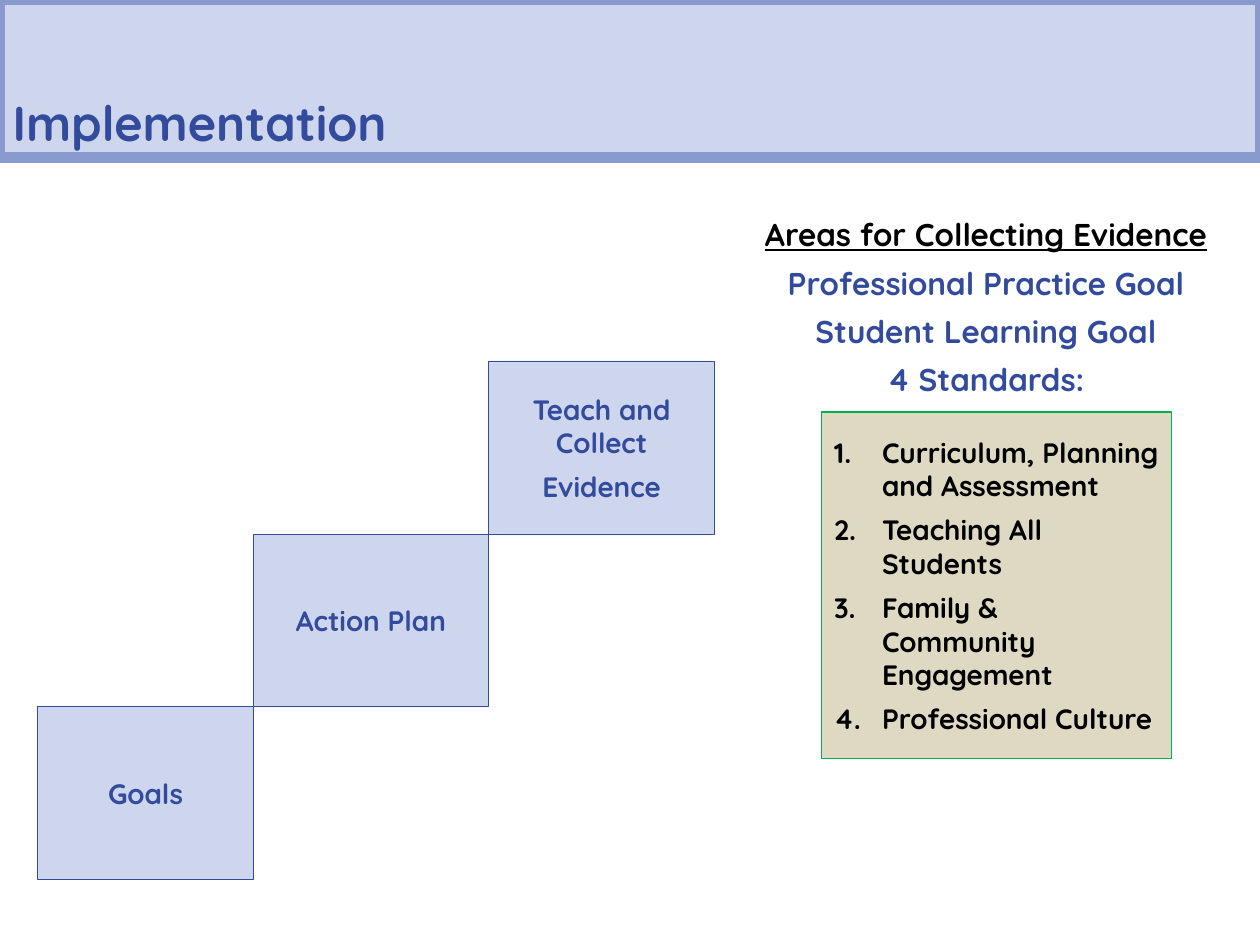
from dataclasses import dataclass

import pptx
import pptx.dml.color
import pptx.enum.shapes
import pptx.enum.text
import pptx.oxml
import pptx.oxml.ns
import pptx.util

Inches = pptx.util.Inches
Pt = pptx.util.Pt
RGBColor = pptx.dml.color.RGBColor
Align = pptx.enum.text.PP_ALIGN
Anchor = pptx.enum.text.MSO_ANCHOR

FONT = "Quicksand"
NAVY = RGBColor(0x33, 0x4B, 0x9C)
PALE_BLUE = RGBColor(0xCE, 0xD6, 0xED)
FRAME_BLUE = RGBColor(0x89, 0x9A, 0xCE)
TAN = RGBColor(0xDD, 0xD9, 0xC3)
GREEN = RGBColor(0x00, 0xB0, 0x50)
BLACK = RGBColor(0, 0, 0)

STEP_LEFT, STEP_HEIGHT, STAIRS_BOTTOM = 0.3, 1.37, 6.98


@dataclass
class Step:
    lines: list[str]
    width: float


STEPS = [
    Step(["Goals"], 1.71),
    Step(["Action Plan"], 1.87),
    Step(["Teach and Collect", "Evidence"], 1.79),
]
EVIDENCE_AREAS = [
    "Areas for Collecting Evidence",
    "Professional Practice Goal",
    "Student Learning Goal",
    "4 Standards:",
]
STANDARDS = [
    "Curriculum, Planning and Assessment",
    "Teaching All Students",
    "Family & Community Engagement",
    "Professional Culture",
]


def apply(target, formats: dict) -> None:
    for name, value in formats.items():
        setattr(target, name, value)


def place(shape, left: float, top: float, width: float, height: float) -> None:
    apply(shape, {"left": Inches(left), "top": Inches(top),
                  "width": Inches(width), "height": Inches(height)})


def paint(shape, fill: RGBColor, line: RGBColor, weight: float) -> None:
    shape.fill.solid()
    shape.fill.fore_color.rgb = fill
    shape.line.color.rgb = line
    shape.line.width = Pt(weight)


def write(shape, lines: list[str], size: int, color: RGBColor, align: Align,
          anchor: Anchor = Anchor.MIDDLE, after: int = 6, wrap: bool = True) -> list:
    frame = shape.text_frame
    frame.text = "\n".join(lines)
    apply(frame, {"word_wrap": wrap, "vertical_anchor": anchor,
                  "auto_size": pptx.enum.text.MSO_AUTO_SIZE.NONE})
    for paragraph in frame.paragraphs:
        apply(paragraph, {"alignment": align, "space_before": Pt(0), "space_after": Pt(after)})
        font = paragraph.runs[0].font
        apply(font, {"name": FONT, "size": Pt(size), "bold": True})
        font.color.rgb = color
    return list(frame.paragraphs)


def number(paragraph, indent: float) -> None:
    properties = paragraph._p.get_or_add_pPr()
    properties.set("marL", str(Inches(indent)))
    properties.set("indent", str(Inches(-indent)))
    for tag, attribute, value in (("a:buFont", "typeface", "+mj-lt"),
                                  ("a:buAutoNum", "type", "arabicPeriod")):
        bullet = pptx.oxml.parse_xml(f"<{tag} {pptx.oxml.ns.nsdecls('a')}/>")
        bullet.set(attribute, value)
        properties.append(bullet)


def draw_stairs(slide, steps: list[Step]) -> None:
    left, top = STEP_LEFT, STAIRS_BOTTOM
    for step in steps:
        top -= STEP_HEIGHT
        box = slide.shapes.add_shape(pptx.enum.shapes.MSO_SHAPE.RECTANGLE, 0, 0, 0, 0)
        place(box, left, top, step.width, STEP_HEIGHT)
        box.shadow.inherit = False
        paint(box, PALE_BLUE, NAVY, 0.5)
        write(box, step.lines, 16, NAVY, Align.CENTER)
        left += step.width


def main() -> None:
    presentation = pptx.Presentation()
    apply(presentation, {"slide_width": Inches(10), "slide_height": Inches(7.5)})
    slide = presentation.slides.add_slide(presentation.slide_layouts[1])

    # Title band
    title = slide.shapes.title
    place(title, 0, 0, 10, 1.25)
    paint(title, PALE_BLUE, FRAME_BLUE, 6)
    heading = write(title, ["Implementation"], 28, NAVY, Align.LEFT, Anchor.BOTTOM, after=0)[0]
    heading.line_spacing = Pt(26)
    apply(title.text_frame, {"margin_left": Inches(0.1), "margin_top": 0,
                             "margin_right": Inches(0.5), "margin_bottom": Inches(0.05)})

    # Staircase from goals to evidence
    draw_stairs(slide, STEPS)

    # Areas for collecting evidence
    areas = slide.shapes.add_textbox(0, 0, 0, 0)
    place(areas, 5.78, 1.66, 4.09, 1.6)
    areas_heading = write(areas, EVIDENCE_AREAS, 18, NAVY, Align.CENTER, Anchor.TOP, wrap=False)[0]
    areas_heading.runs[0].font.underline = True
    areas_heading.runs[0].font.color.rgb = BLACK

    # Numbered standards
    standards = slide.placeholders[1]
    place(standards, 6.52, 3.27, 2.78, 2.75)
    paint(standards, TAN, GREEN, 0.75)
    for standard in write(standards, STANDARDS, 16, BLACK, Align.LEFT):
        number(standard, 0.38)

    presentation.save("out.pptx")


if __name__ == "__main__":
    main()
